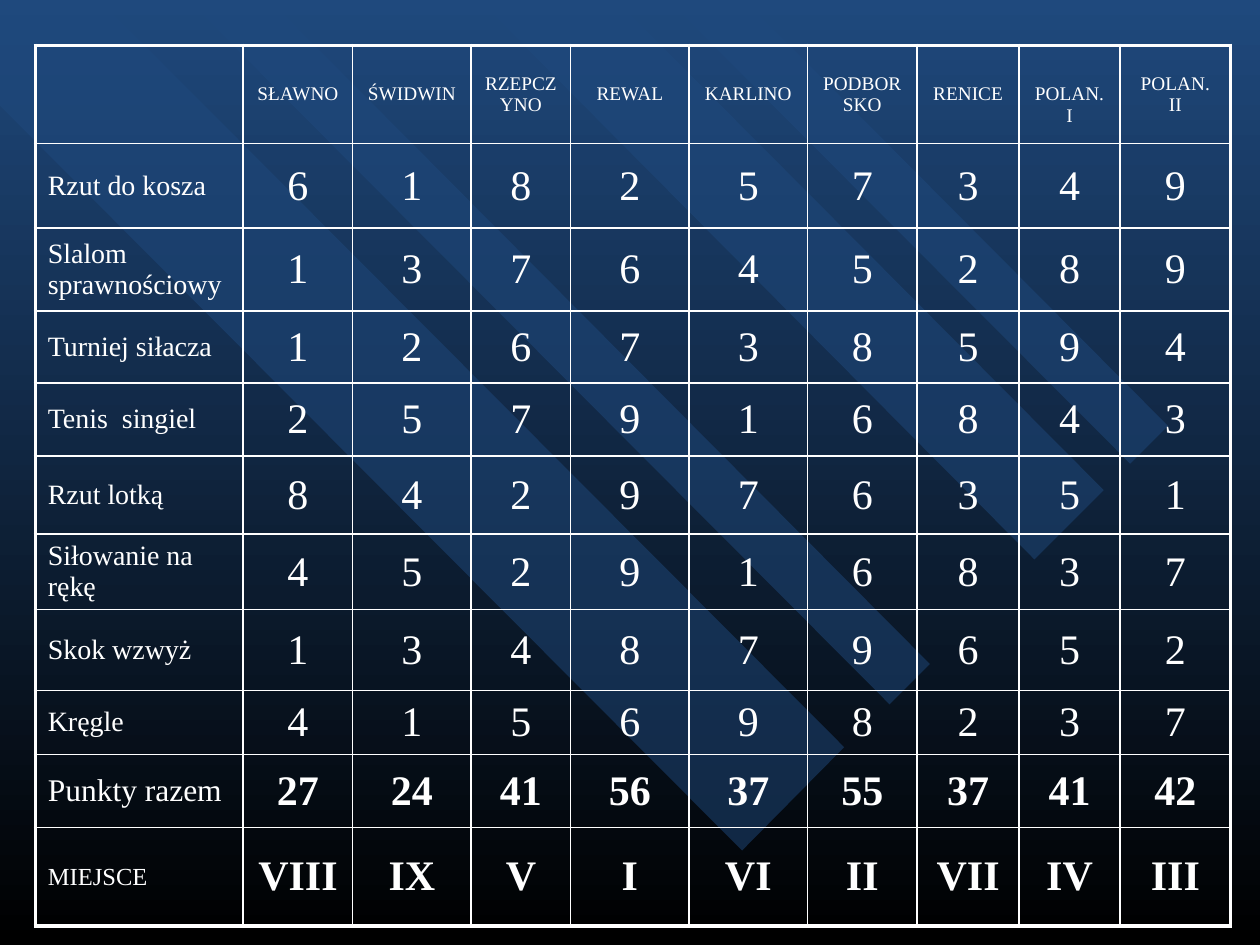
from lxml.etree import SubElement
from pptx import Presentation
from pptx.dml.color import RGBColor
from pptx.enum.text import MSO_ANCHOR, PP_ALIGN
from pptx.oxml import parse_xml
from pptx.oxml.ns import nsdecls, qn
from pptx.util import Inches, Pt

NAVY = RGBColor(0x1F, 0x49, 0x7D)
BLACK = RGBColor(0, 0, 0)
WHITE = RGBColor(0xFF, 0xFF, 0xFF)
FONT = "Times New Roman"
THIN, THICK = Pt(1), Pt(2.25)


def write_text(cell, text, size, bold=False, align=PP_ALIGN.CENTER):
    cell.vertical_anchor = MSO_ANCHOR.MIDDLE
    para = cell.text_frame.paragraphs[0]
    para.alignment = align
    span = para.add_run()
    span.text = text
    span.font.name = FONT
    span.font.size = Pt(size)
    span.font.bold = bold
    span.font.color.rgb = WHITE


def set_borders(cell, **widths):
    """Draw white edges; widths are given in schema order L, R, T, B."""
    properties = cell._tc.get_or_add_tcPr()
    for position, (side, width) in enumerate(widths.items()):
        line = parse_xml(
            f'<a:ln{side} {nsdecls("a")} w="{width}"><a:solidFill>'
            f'<a:srgbClr val="{WHITE}"/></a:solidFill></a:ln{side}>')
        properties.insert(position, line)


deck = Presentation()
deck.slide_width, deck.slide_height = Inches(10), Inches(7.5)
page = deck.slides.add_slide(deck.slide_layouts[6])

backdrop = page.background.fill
backdrop.gradient()
backdrop.gradient_angle = 270
for stop, color in zip(backdrop.gradient_stops, (NAVY, BLACK)):
    stop.color.rgb = color

# Translucent diagonal stripes
STRIPES = [
    [(6.7, 5.93), (0.79, 0), (0, 0), (0, 0.84), (5.89, 6.75)],
    [(2.14, 0), (7.38, 5.27), (7.06, 5.59), (1.49, 0)],
    [(4.89, 0), (8.76, 3.89), (8.21, 4.44), (3.8, 0)],
    [(5.3, 0), (8.97, 3.68), (9.27, 3.38), (5.91, 0)],
]
for corners in STRIPES:
    points = [(Inches(x), Inches(y)) for x, y in corners]
    builder = page.shapes.build_freeform(*points[0])
    builder.add_line_segments(points[1:], close=True)
    stripe = builder.convert_to_shape()
    stripe.shadow.inherit = False
    stripe.line.fill.background()
    stripe.fill.solid()
    stripe.fill.fore_color.rgb = NAVY
    tint = stripe._element.spPr.find(qn("a:solidFill"))[0]
    SubElement(tint, qn("a:alpha"), val="50000")

# Results table: label, label size, value size, bold values, values
TEAMS = ["SŁAWNO", "ŚWIDWIN", "RZEPCZYNO", "REWAL", "KARLINO",
         "PODBORSKO", "RENICE", " POLAN.I", "POLAN. II"]
RESULTS = [
    ("", 11, 11, False, TEAMS),
    ("Rzut do kosza", 16, 24, False, "6 1 8 2 5 7 3 4 9".split()),
    ("Slalom sprawnościowy", 16, 24, False, "1 3 7 6 4 5 2 8 9".split()),
    ("Turniej siłacza", 16, 24, False, "1 2 6 7 3 8 5 9 4".split()),
    ("Tenis  singiel", 16, 24, False, "2 5 7 9 1 6 8 4 3".split()),
    ("Rzut lotką", 16, 24, False, "8 4 2 9 7 6 3 5 1".split()),
    ("Siłowanie na rękę", 16, 24, False, "4 5 2 9 1 6 8 3 7".split()),
    ("Skok wzwyż", 16, 24, False, "1 3 4 8 7 9 6 5 2".split()),
    ("Kręgle", 16, 24, False, "4 1 5 6 9 8 2 3 7".split()),
    ("Punkty razem", 18, 24, True, "27 24 41 56 37 55 37 41 42".split()),
    ("MIEJSCE", 14, 24, True, "VIII IX V I VI II VII IV III".split()),
]
COLUMN_WIDTHS = [1.65, 0.87, 0.94, 0.79, 0.94, 0.94, 0.87, 0.81, 0.8, 0.88]
ROW_HEIGHTS = [0.78, 0.67, 0.66, 0.57, 0.58, 0.62, 0.6, 0.64, 0.51, 0.58, 0.78]

table = page.shapes.add_table(
    len(ROW_HEIGHTS), len(COLUMN_WIDTHS), Inches(0.28), Inches(0.36),
    Inches(sum(COLUMN_WIDTHS)), Inches(sum(ROW_HEIGHTS))).table
table.first_row = table.horz_banding = False
for column, width in zip(table.columns, COLUMN_WIDTHS):
    column.width = Inches(width)
for row, height in zip(table.rows, ROW_HEIGHTS):
    row.height = Inches(height)

last_row, last_column = len(ROW_HEIGHTS) - 1, len(COLUMN_WIDTHS) - 1
for r, (label, label_size, value_size, bold, values) in enumerate(RESULTS):
    if label:
        write_text(table.cell(r, 0), label, label_size, align=PP_ALIGN.LEFT)
    for c, value in enumerate(values, start=1):
        write_text(table.cell(r, c), value, value_size, bold=bold)
    for c in range(last_column + 1):
        cell = table.cell(r, c)
        cell.fill.background()
        set_borders(cell,
                    L=THICK if c == 0 else THIN,
                    R=THICK if c == last_column else THIN,
                    T=THICK if r == 0 else THIN,
                    B=THICK if r == last_row else THIN)

deck.save("out.pptx")
